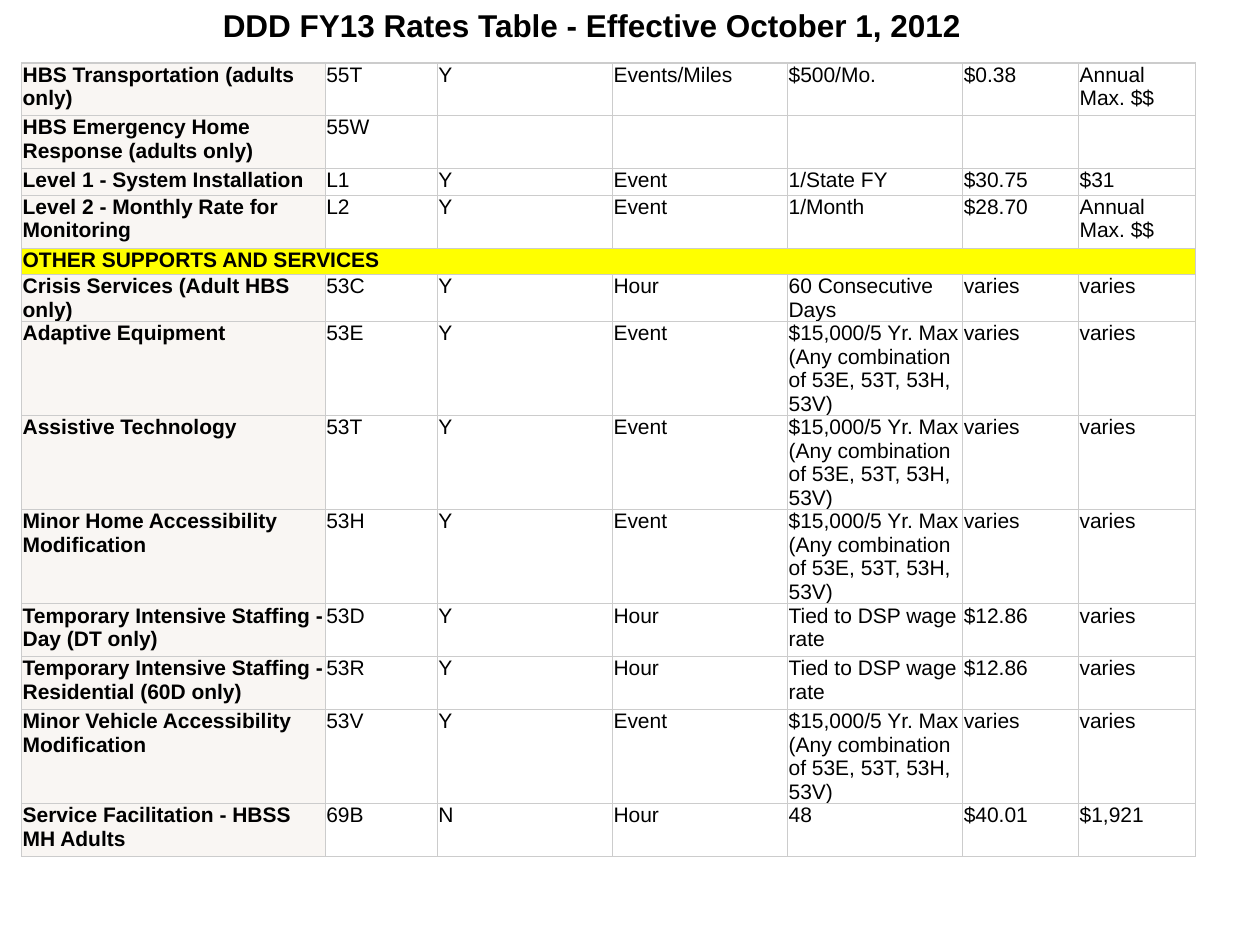
from typing import NamedTuple

from lxml import etree
from pptx import Presentation
from pptx.dml.color import RGBColor
from pptx.enum.text import MSO_AUTO_SIZE
from pptx.oxml.ns import qn
from pptx.util import Inches, Pt

FIT_SHAPE = MSO_AUTO_SIZE.SHAPE_TO_FIT_TEXT
FONT = "Arial"
COLORS = {
    "text": "000000",
    "border": "CCCCCC",
    "service": "F9F6F3",
    "body": "FFFFFF",
    "section": "FFFF00",
}
COL_WIDTHS = (2.41, 0.89, 1.39, 1.39, 1.39, 0.92, 0.93)
EQUIPMENT_MAX = "$15,000/5 Yr. Max (Any combination of 53E, 53T, 53H, 53V)"
WAGE_RATE = "Tied to DSP wage rate"


class Rate(NamedTuple):
    height: float
    service: str
    code: str = ""
    approval: str = ""
    unit: str = ""
    limit: str = ""
    rate: str = ""
    maximum: str = ""


RATES = (
    Rate(0.42, "HBS Transportation (adults only)", "55T", "Y", "Events/Miles", "$500/Mo.", "$0.38", "Annual Max. $$"),
    Rate(0.42, "HBS Emergency Home Response (adults only)", "55W"),
    Rate(0.21, "Level 1 - System Installation", "L1", "Y", "Event", "1/State FY", "$30.75", "$31"),
    Rate(0.42, "Level 2 - Monthly Rate for Monitoring", "L2", "Y", "Event", "1/Month", "$28.70", "Annual Max. $$"),
    Rate(0.21, "OTHER SUPPORTS AND SERVICES"),
    Rate(0.21, "Crisis Services (Adult HBS only)", "53C", "Y", "Hour", "60 Consecutive Days", "varies", "varies"),
    Rate(0.62, "Adaptive Equipment", "53E", "Y", "Event", EQUIPMENT_MAX, "varies", "varies"),
    Rate(0.62, "Assistive Technology", "53T", "Y", "Event", EQUIPMENT_MAX, "varies", "varies"),
    Rate(0.62, "Minor Home Accessibility Modification", "53H", "Y", "Event", EQUIPMENT_MAX, "varies", "varies"),
    Rate(0.42, "Temporary Intensive Staffing - Day (DT only)", "53D", "Y", "Hour", WAGE_RATE, "$12.86", "varies"),
    Rate(0.42, "Temporary Intensive Staffing - Residential (60D only)", "53R", "Y", "Hour", WAGE_RATE, "$12.86", "varies"),
    Rate(0.62, "Minor Vehicle Accessibility Modification", "53V", "Y", "Event", EQUIPMENT_MAX, "varies", "varies"),
    Rate(0.42, "Service Facilitation - HBSS MH Adults", "69B", "N", "Hour", "48", "$40.01", "$1,921"),
)


def write(tf, text: str, size: float, bold: bool) -> None:
    p = tf.paragraphs[0]
    p.text = text
    p.font.name = FONT
    p.font.size = Pt(size)
    p.font.bold = bold
    p.font.color.rgb = RGBColor.from_string(COLORS["text"])


def add_borders(cell) -> None:
    tc_pr = cell._tc.get_or_add_tcPr()
    for i, side in enumerate(("lnL", "lnR", "lnT", "lnB")):
        ln = etree.Element(qn(f"a:{side}"), w=str(Pt(0.75)))
        fill = etree.SubElement(ln, qn("a:solidFill"))
        etree.SubElement(fill, qn("a:srgbClr"), val=COLORS["border"])
        tc_pr.insert(i, ln)


def style_cell(cell, text: str, fill: str, bold: bool) -> None:
    cell.margin_left = cell.margin_right = Inches(0.01)
    cell.margin_top = cell.margin_bottom = Inches(0)
    cell.fill.solid()
    cell.fill.fore_color.rgb = RGBColor.from_string(COLORS[fill])
    add_borders(cell)
    write(cell.text_frame, text, 12, bold)


def add_rates_table(slide) -> None:
    height = sum(rate.height for rate in RATES)
    table = slide.shapes.add_table(
        len(RATES), len(COL_WIDTHS), Inches(0.17), Inches(0.5),
        Inches(sum(COL_WIDTHS)), Inches(height),
    ).table
    table.first_row = table.horz_banding = False
    for column, width in zip(table.columns, COL_WIDTHS):
        column.width = Inches(width)
    for r, rate in enumerate(RATES):
        table.rows[r].height = Inches(rate.height)
        is_section = not rate.code
        for c, text in enumerate(rate[1:]):
            first_fill = "section" if is_section else "service"
            fill = first_fill if c == 0 or is_section else "body"
            style_cell(table.cell(r, c), text, fill, c == 0)
        if is_section:
            table.cell(r, 0).merge(table.cell(r, len(COL_WIDTHS) - 1))


def add_title(slide) -> None:
    sp = slide.shapes.add_textbox(Inches(1.67), Inches(0), Inches(7), Inches(0.42))
    tf = sp.text_frame
    tf.word_wrap = True
    tf.auto_size = FIT_SHAPE
    write(tf, "DDD FY13 Rates Table - Effective October 1, 2012", 18, True)


def main() -> None:
    prs = Presentation()
    prs.slide_width = Inches(10)
    prs.slide_height = Inches(7.5)
    slide = prs.slides.add_slide(prs.slide_layouts[6])
    add_rates_table(slide)
    add_title(slide)
    prs.save("out.pptx")


if __name__ == "__main__":
    main()
